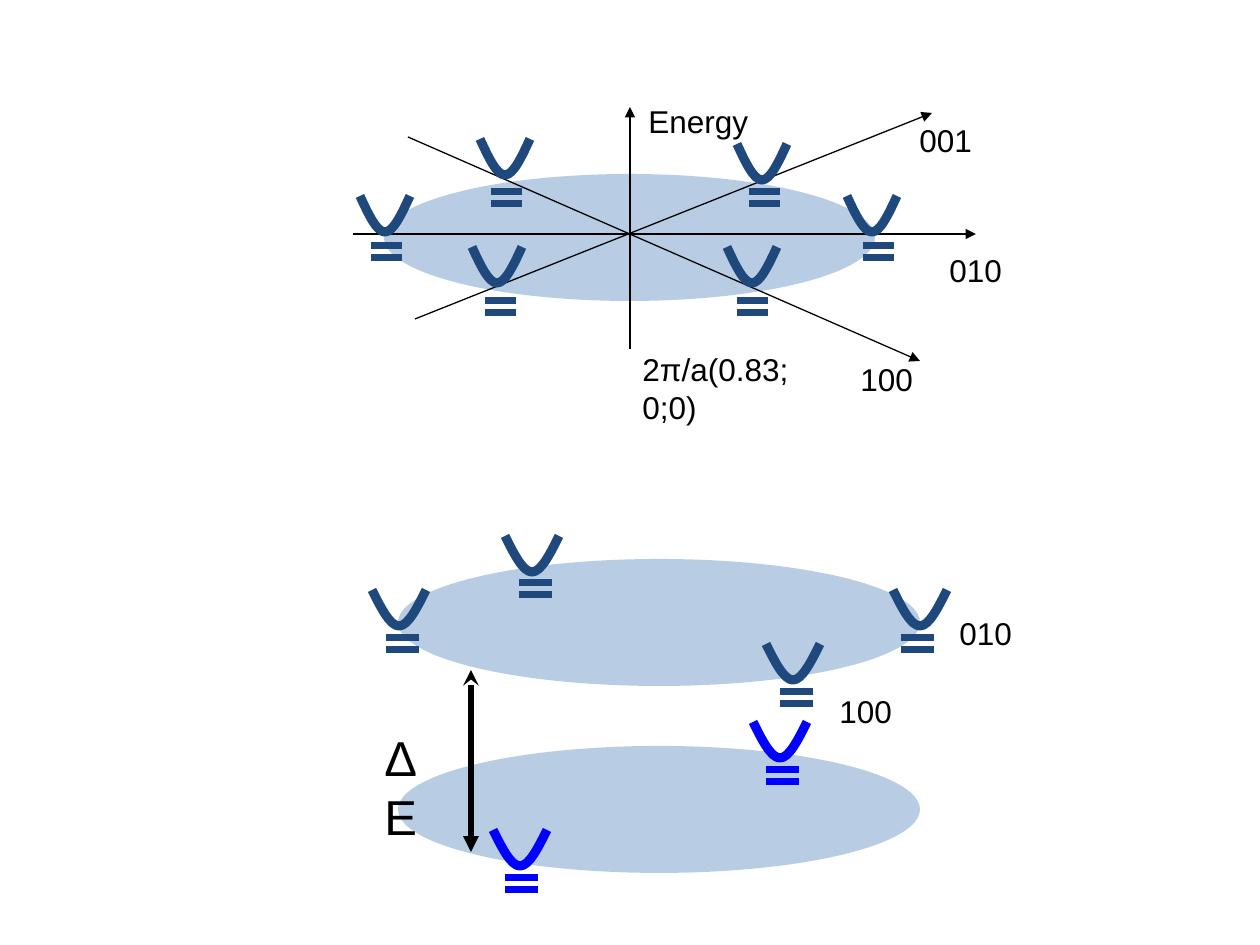
from lxml.etree import SubElement
from pptx import Presentation
from pptx.dml.color import RGBColor
from pptx.enum.shapes import MSO_CONNECTOR as Connector, MSO_SHAPE as Preset
from pptx.oxml.ns import qn
from pptx.util import Pt

PX = 914400 // 126
BLACK, NAVY, BLUE, PALE = "000000", "1F497D", "0000FF", "4F81BD"


def emu(*lengths):
    return [length * PX for length in lengths]


def color(value):
    return RGBColor.from_string(value)


class Diagram:
    font = "Arial"
    bar_gap = 12
    valley_height = 36

    def __init__(self, slide):
        self.slide = slide
        self.shapes = slide.shapes

    def ellipse(self, left, top, width, height):
        shape = self.shapes.add_shape(Preset.OVAL, *emu(left, top, width, height))
        shape.shadow.inherit = False
        shape.fill.solid()
        shape.fill.fore_color.rgb = color(PALE)
        shape.line.fill.background()
        tint = shape.fill._xPr.find(qn("a:solidFill"))[0]
        SubElement(tint, qn("a:alpha"), val="40000")

    def line(self, start, end, ink=BLACK, weight=0.75, head=None, tail=None):
        line = self.shapes.add_connector(Connector.STRAIGHT, *emu(*start, *end))
        line.line.color.rgb = color(ink)
        line.line.width = Pt(weight)
        properties = line._element.spPr
        stroke = properties.find(qn("a:ln"))
        for tag, arrow in (("a:headEnd", head), ("a:tailEnd", tail)):
            if arrow:
                SubElement(stroke, qn(tag), type=arrow)
        SubElement(properties, qn("a:effectLst"))

    def label(self, text, left, top, width, height=50, size=18, wrap=False):
        box = self.shapes.add_textbox(*emu(left, top, width, height))
        frame = box.text_frame
        frame.word_wrap = wrap
        span = frame.paragraphs[0].add_run()
        span.text = text
        span.font.size = Pt(size)
        span.font.name = self.font
        span.font.color.rgb = color(BLACK)

    def valley(self, left, top, width, ink):
        heights = (0, 0.5, 1, 1, 1, 0.5, 0)
        points = [
            (round(left * PX + width * PX * step / 6),
             round((top + self.valley_height * depth) * PX))
            for step, depth in enumerate(heights)
        ]
        builder = self.shapes.build_freeform(*points[0])
        builder.add_line_segments(points[1:], close=False)
        shape = builder.convert_to_shape()
        outline = shape._element.spPr.find(".//" + qn("a:path"))
        segments = outline.findall(qn("a:lnTo"))
        for half in (segments[:3], segments[3:]):
            curve = SubElement(outline, qn("a:cubicBezTo"))
            for segment in half:
                curve.append(segment[0])
                outline.remove(segment)
        shape.shadow.inherit = False
        shape.fill.background()
        shape.line.color.rgb = color(ink)
        shape.line.width = Pt(5.25)

    def bars(self, left, top, width, ink):
        for y in (top, top + self.bar_gap):
            self.line((left, y), (left + width, y), ink, 4)

    def valleys(self, places, width, bar_width):
        for left, top, _, _, ink in places:
            self.valley(left, top, width, ink)
        for _, _, left, top, ink in places:
            self.bars(left, top, bar_width, ink)


def draw_unstrained(diagram):
    center = (630, 234)
    diagram.ellipse(384, 174, 491, 127)
    diagram.line((353, 234), (976, 234), tail="triangle")
    for bottom in (307, 349):
        diagram.line((630, bottom), center)
    for text, left, top, width in (
        ("010", 937, 245, 78), ("100", 848, 354, 78),
        ("001", 907, 115, 78), ("Energy", 636, 96, 125),
    ):
        diagram.label(text, left, top, width)
    for start, end in (
        (center, (630, 107)), ((415, 319), (932, 113)), ((408, 137), (920, 361)),
    ):
        diagram.line(start, end, tail="triangle")
    diagram.valleys((
        (480, 139, 491, 192, NAVY), (360, 196, 371, 246, NAVY),
        (737, 144, 749, 192, NAVY), (847, 196, 863, 246, NAVY),
        (472, 247, 485, 301, NAVY), (727, 247, 737, 301, NAVY),
    ), width=50, bar_width=31)
    diagram.label("2π/a(0.83; 0;0)", 630, 344, 229, wrap=True)


def draw_strained(diagram):
    for top in (746, 559):
        diagram.ellipse(398, top, 522, 127)
    diagram.label("010", 947, 608, 78)
    diagram.label("100", 827, 686, 78)
    diagram.valleys((
        (893, 590, 901, 638, NAVY), (372, 590, 386, 638, NAVY),
        (766, 644, 780, 692, NAVY), (505, 536, 519, 583, NAVY),
        (753, 722, 766, 770, BLUE), (493, 830, 505, 878, BLUE),
    ), width=54, bar_width=33)
    diagram.label("ΔE", 372, 721, 88, 72, size=28, wrap=True)
    diagram.line((471, 670), (471, 852), weight=3, head="stealth", tail="triangle")


def main():
    deck = Presentation()
    deck.slide_width, deck.slide_height = emu(1260, 945)
    diagram = Diagram(deck.slides.add_slide(deck.slide_layouts[6]))
    draw_unstrained(diagram)
    draw_strained(diagram)
    deck.save("out.pptx")


if __name__ == "__main__":
    main()
